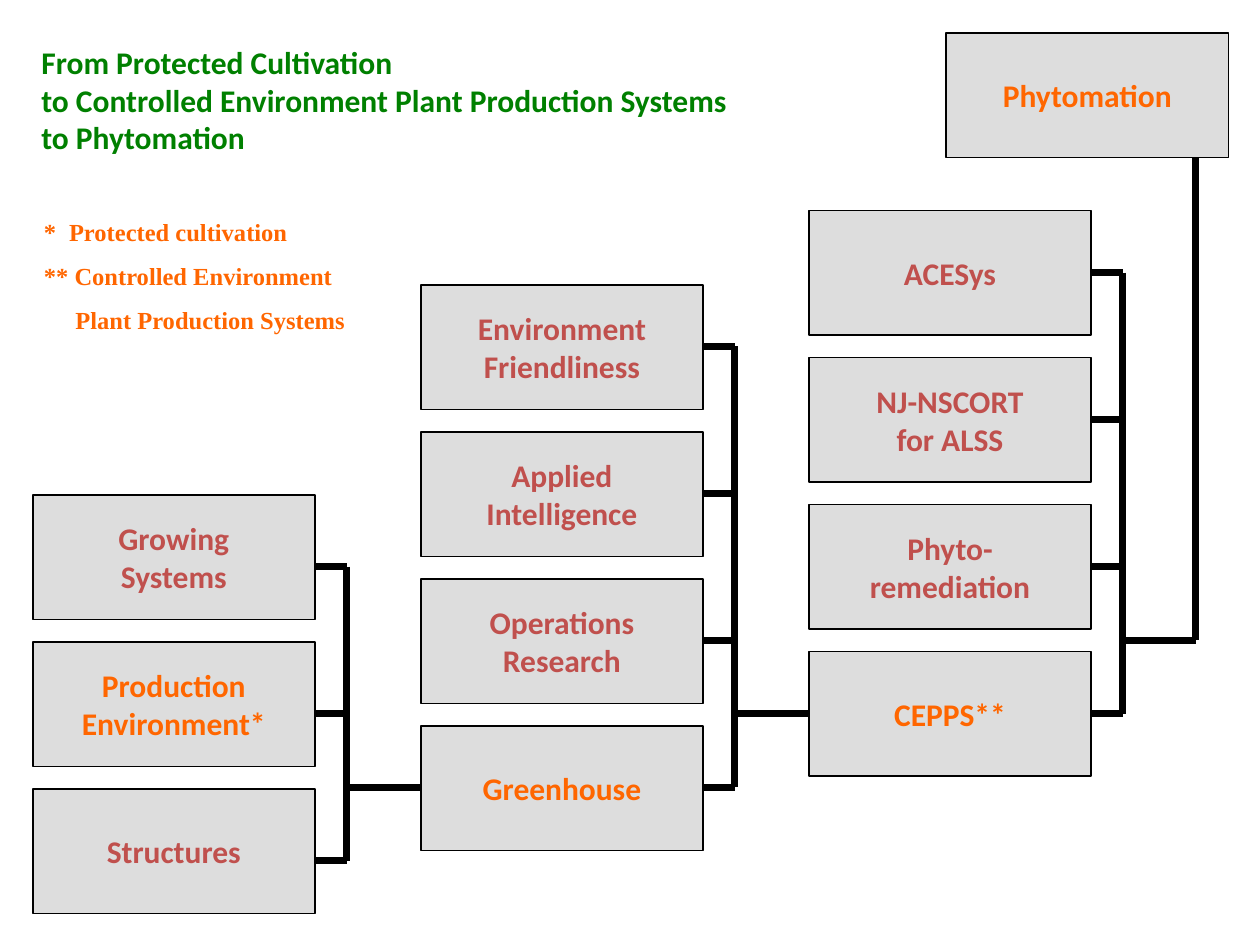
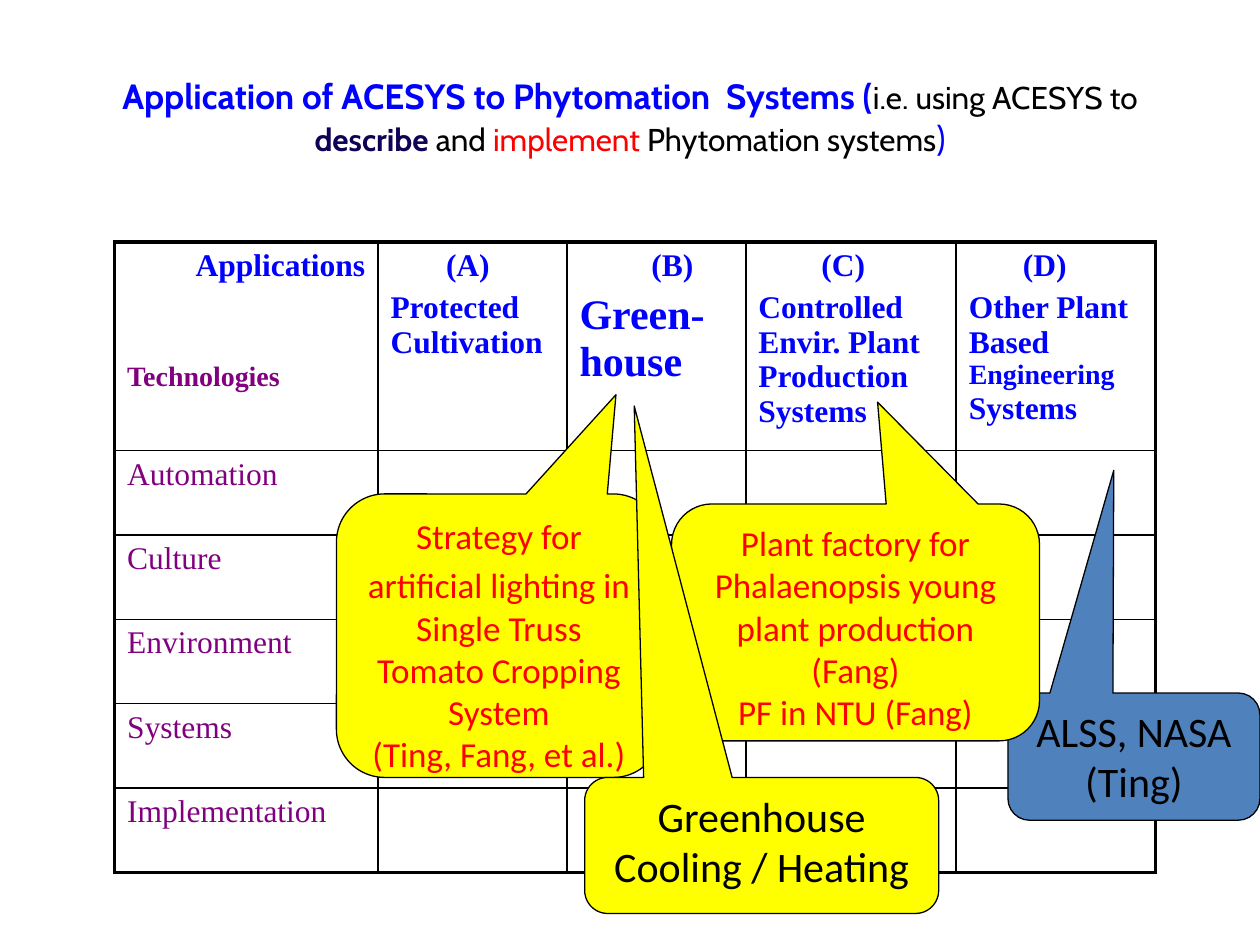
from dataclasses import dataclass

from lxml import etree
from pptx import Presentation
from pptx import util as u
from pptx.dml.color import RGBColor
from pptx.enum import shapes, text
from pptx.oxml import ns


@dataclass(frozen=True)
class Theme:
    black: str = "000000"
    panel: str = "DDDDDD"
    orange: str = "FF6600"
    brick: str = "C0504D"
    green: str = "008000"
    blue: str = "0000FF"
    navy: str = "0E0254"
    red: str = "FF0000"
    purple: str = "800080"
    yellow: str = "FFFF00"
    steel: str = "4F81BD"
    sans: str = "Calibri"
    serif: str = "Times New Roman"
    title: str = "Cabin"
    note: int = 14
    small: int = 16
    body: int = 18
    large: int = 20
    huge: int = 24
    thin: float = 1
    frame: float = 2.25
    branch: float = 4


@dataclass
class Para:
    spans: list
    left: float = 0
    hang: float = 0
    before: float = 0
    align: object = None


THEME = Theme()
CENTER = text.PP_ALIGN.CENTER
MIDDLE = text.MSO_ANCHOR.MIDDLE
TOP = text.MSO_ANCHOR.TOP

BOX_WIDTH, BOX_HEIGHT = 2.24, 0.99
STAGE_STEP = 3.08
BOX_PITCH = 7 / 6
STUB, LINK = 0.25, 0.58
STAGES = [
    (6.26, ["Growing\nSystems", "Production\nEnvironment*", "Structures"]),
    (5.76, ["Environment\nFriendliness", "Applied\nIntelligence",
            "Operations\nResearch", "Greenhouse"]),
    (5.17, ["ACESys", "NJ-NSCORT\nfor ALSS", "Phyto-\nremediation", "CEPPS**"]),
]
MAIN_LINE = {"Production\nEnvironment*", "Greenhouse", "CEPPS**"}

COLUMN_WIDTHS = [2.09, 1.5, 1.42, 1.67, 1.58]
ROW_HEIGHTS = [1.53] + [0.67] * 5
TECHNOLOGIES = ["Automation", "Culture", "Environment", "Systems", "Implementation"]
APPLICATIONS = [
    ("(A)", 0.44, 4, ["Protected Cultivation"]),
    ("(B)", 0.57, 5.3, [("Green-house", {"size": THEME.huge})]),
    ("(C)", 0.5, 4, ["Controlled Envir. Plant Production Systems"]),
    ("(D)", 0.43, 4, ["Other Plant Based ", ("Engineering ", {"size": THEME.small}),
                      "Systems"]),
]


def color(value):
    return RGBColor.from_string(value)


def place(left, top, width, height):
    return [u.Inches(value) for value in (left, top, width, height)]


def style_span(span, size, font, ink, bold):
    span.font.size = u.Pt(size)
    span.font.name = font
    span.font.bold = bold
    span.font.color.rgb = color(ink)


def write(frame, paras, *, size=THEME.body, font=THEME.sans, ink=THEME.black,
          bold=False, align=None, anchor=TOP, wrap=True):
    frame.word_wrap = wrap
    frame.vertical_anchor = anchor
    base = {"size": size, "font": font, "ink": ink, "bold": bold}
    for index, item in enumerate(paras):
        item = item if isinstance(item, Para) else Para([item])
        para = frame.paragraphs[0] if index == 0 else frame.add_paragraph()
        para.alignment = item.align or align
        if item.before:
            para.space_before = u.Pt(item.before)
        if item.left:
            properties = para._p.get_or_add_pPr()
            properties.set("marL", str(u.Inches(item.left)))
            properties.set("indent", str(u.Inches(-item.hang)))
        for part in item.spans:
            words, changes = (part, {}) if isinstance(part, str) else part
            span = para.add_run()
            span.text = words
            style_span(span, **{**base, **changes})


def add_text(page, area, paras, **style):
    box = page.shapes.add_textbox(*place(*area))
    write(box.text_frame, paras, **style)


def add_panel(page, kind, area, fill, weight, paras, **style):
    box = page.shapes.add_shape(kind, *place(*area))
    box.shadow.inherit = False
    box.fill.solid()
    box.fill.fore_color.rgb = color(fill)
    box.line.color.rgb = color(THEME.black)
    box.line.width = u.Pt(weight)
    write(box.text_frame, paras, **style)
    return box


def add_box(page, left, top, label, ink):
    add_panel(page, shapes.MSO_SHAPE.RECTANGLE, (left, top, BOX_WIDTH, BOX_HEIGHT),
              THEME.panel, THEME.thin, label.split("\n"), ink=ink, bold=True,
              align=CENTER, anchor=MIDDLE, wrap=False)


def add_callout(page, area, tip, fill, paras, **style):
    box = add_panel(page, shapes.MSO_SHAPE.ROUNDED_RECTANGULAR_CALLOUT, area,
                    fill, 0.75, paras, align=CENTER, **style)
    for index, value in enumerate((*tip, 0.17)):
        box.adjustments[index] = value


def add_branch(page, x1, y1, x2, y2):
    ends = [u.Inches(value) for value in (x1, y1, x2, y2)]
    branch = page.shapes.add_connector(shapes.MSO_CONNECTOR.STRAIGHT, *ends)
    branch.line.color.rgb = color(THEME.black)
    branch.line.width = u.Pt(THEME.branch)
    etree.SubElement(branch._element.spPr, ns.qn("a:effectLst"))


def add_stage(page, index, last_top, labels):
    left = 0.26 + index * STAGE_STEP
    stub_left = 2.5 + index * STAGE_STEP
    spine = stub_left + STUB
    last_stub = 6.83 - index * BOX_PITCH / 2
    exit_y = last_stub - BOX_PITCH / 2
    for row, label in enumerate(labels):
        rise = (len(labels) - 1 - row) * BOX_PITCH
        ink = THEME.orange if label in MAIN_LINE else THEME.brick
        add_box(page, left, last_top - rise, label, ink)
        add_branch(page, stub_left, last_stub - rise, spine, last_stub - rise)
    add_branch(page, spine, last_stub - rise_of(labels), spine, last_stub)
    add_branch(page, spine, exit_y, spine + LINK, exit_y)
    return spine + LINK, exit_y


def rise_of(labels):
    return (len(labels) - 1) * BOX_PITCH


def set_borders(cell, weights):
    properties = cell._tc.get_or_add_tcPr()
    for side, weight in zip("LRTB", weights):
        line = etree.SubElement(properties, ns.qn(f"a:ln{side}"), w=str(u.Pt(weight)))
        fill = etree.SubElement(line, ns.qn("a:solidFill"))
        etree.SubElement(fill, ns.qn("a:srgbClr"), val=THEME.black)


def add_matrix(page):
    rows, columns = len(ROW_HEIGHTS), len(COLUMN_WIDTHS)
    area = place(0.91, 1.92, sum(COLUMN_WIDTHS), sum(ROW_HEIGHTS))
    table = page.shapes.add_table(rows, columns, *area).table
    table.first_row = table.horz_banding = False
    for column, width in zip(table.columns, COLUMN_WIDTHS):
        column.width = u.Inches(width)
    for row, height in zip(table.rows, ROW_HEIGHTS):
        row.height = u.Inches(height)
    for r in range(rows):
        for c in range(columns):
            edges = (c == 0, c == columns - 1, r == 0, r == rows - 1)
            cell = table.cell(r, c)
            set_borders(cell, [THEME.frame if edge else THEME.thin for edge in edges])
            cell.fill.background()
    header = {"font": THEME.serif, "ink": THEME.blue, "bold": True}
    corner = [Para(["Applications"], align=text.PP_ALIGN.RIGHT),
              Para([("Technologies", {"size": THEME.small, "ink": THEME.purple})],
                   before=45)]
    write(table.cell(0, 0).text_frame, corner, **header)
    for c, (letter, indent, gap, spans) in enumerate(APPLICATIONS, 1):
        paras = [Para([letter], left=indent), Para(spans, before=gap)]
        write(table.cell(0, c).text_frame, paras, **header)
    for r, name in enumerate(TECHNOLOGIES, 1):
        write(table.cell(r, 0).text_frame, [name], font=THEME.serif, ink=THEME.purple)


def build_evolution(page):
    for index, (last_top, labels) in enumerate(STAGES):
        goal_x, goal_y = add_stage(page, index, last_top, labels)
    add_box(page, 7.51, 0.26, "Phytomation", THEME.orange)
    add_branch(page, goal_x, 0.26 + BOX_HEIGHT, goal_x, goal_y)
    add_text(page, (0.23, 0.29, 6.59, 1),
             ["From Protected Cultivation",
              "to Controlled Environment Plant Production Systems",
              "to Phytomation"],
             ink=THEME.green, bold=True, wrap=False)
    add_text(page, (0.25, 1.67, 2.83, 1.03),
             [Para(["*\tProtected cultivation"], left=0.2, hang=0.2),
              Para(["** Controlled Environment"], before=8.5),
              Para(["Plant Production Systems"], left=0.25, before=8.5)],
             size=THEME.note, font=THEME.serif, ink=THEME.orange, bold=True)


def build_applications(page):
    strong = {"size": THEME.large, "ink": THEME.blue}
    add_text(page, (0.5, 0.3, 9, 1.25),
             [Para([("Application of ACESYS to Phytomation  Systems (",
                     {**strong, "bold": True}),
                    "i.e. using ACESYS to ",
                    ("describe", {"ink": THEME.navy, "bold": True}),
                    " and ", ("implement", {"ink": THEME.red}),
                    " Phytomation systems", (")", strong)])],
             font=THEME.title, align=CENTER, anchor=MIDDLE)
    add_matrix(page)
    add_callout(page, (8, 5.5, 2, 1.01), (-0.08, -2.25), THEME.steel,
                ["ALSS, NASA", "(Ting)"], size=THEME.huge)
    add_callout(page, (5.33, 4, 2.92, 1.88), (0.06, -0.93), THEME.yellow,
                ["Plant factory for Phalaenopsis young plant production",
                 "(Fang)", "PF in NTU (Fang)"], size=THEME.large, ink=THEME.red)
    add_callout(page, (2.67, 3.92, 2.58, 2.25), (0.36, -0.85), THEME.yellow,
                [Para(["Strategy for artificial lighting in",
                       (" ", {"size": THEME.huge}),
                       "Single Truss Tomato Cropping System"]),
                 "(Ting, Fang, et al.)"], size=THEME.large, ink=THEME.red)
    add_callout(page, (4.64, 6.17, 2.81, 1.08), (-0.36, -3.23), THEME.yellow,
                ["Greenhouse Cooling / Heating"], size=THEME.huge)


def main():
    deck = Presentation()
    deck.slide_width, deck.slide_height = u.Inches(10), u.Inches(7.5)
    for build in (build_evolution, build_applications):
        build(deck.slides.add_slide(deck.slide_layouts[6]))
    deck.save("out.pptx")


if __name__ == "__main__":
    main()
